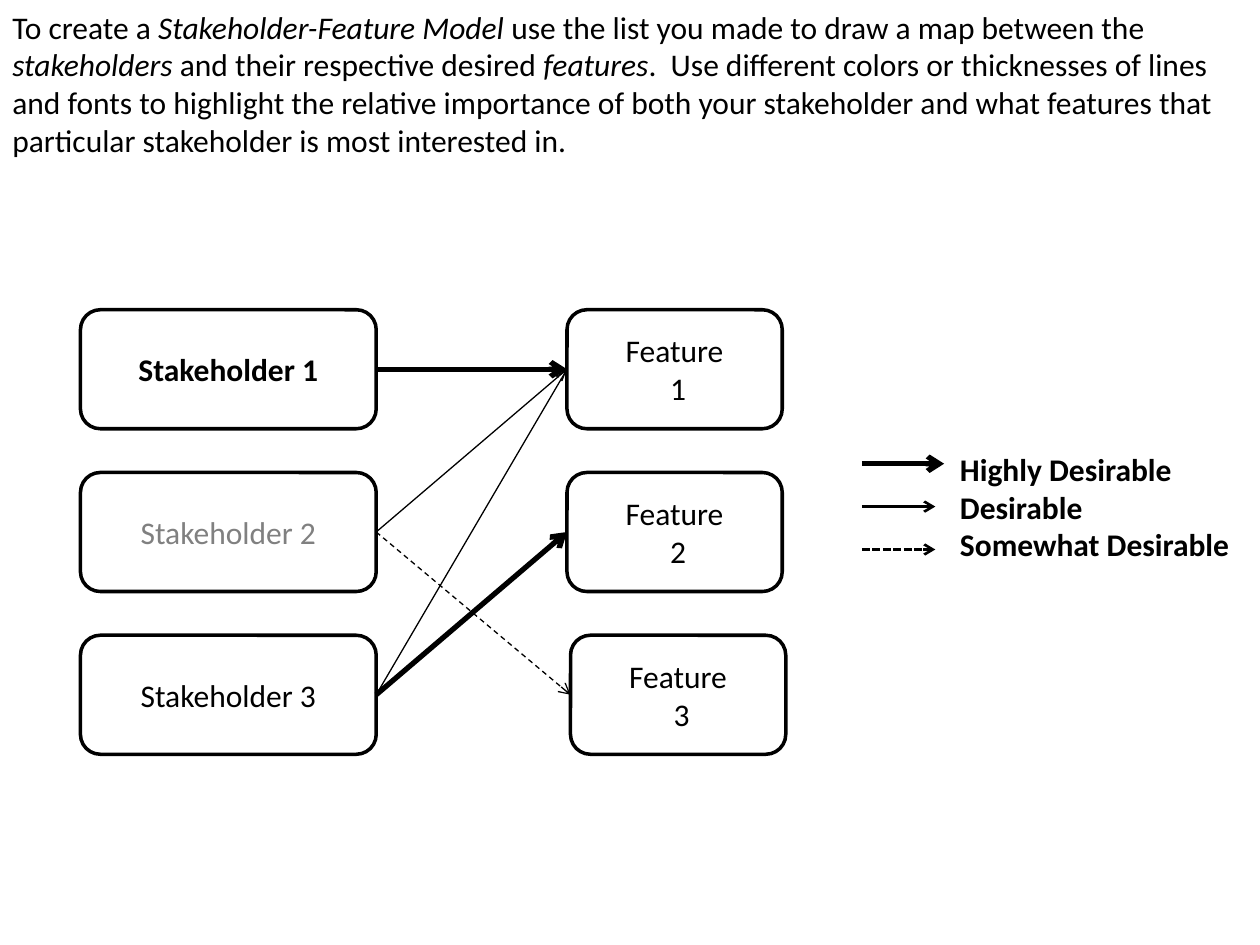
from lxml.etree import SubElement
from pptx import Presentation
from pptx.dml.color import RGBColor
from pptx.enum.dml import MSO_LINE_DASH_STYLE as Dash
from pptx.enum.shapes import MSO_CONNECTOR as Connector, MSO_SHAPE as Shape
from pptx.enum.text import MSO_ANCHOR as Anchor, MSO_AUTO_SIZE as AutoSize, PP_ALIGN as Align
from pptx.oxml.ns import qn
from pptx.util import Pt

COLORS = {"ink": "000000", "muted": "808080"}
LEFT_SITE, RIGHT_SITE = 1, 3


class MapSlide:
    font = {"name": "Calibri", "size": Pt(18)}

    def __init__(self, slide):
        self.slide = slide

    def color(self, name):
        return RGBColor.from_string(COLORS[name])

    def apply(self, target, values):
        for name, value in values.items():
            setattr(target, name, value)

    def add_paragraphs(self, frame, paragraphs, align=Align.LEFT, color="ink"):
        for index, runs in enumerate(paragraphs):
            paragraph = frame.paragraphs[0] if index == 0 else frame.add_paragraph()
            paragraph.alignment = align
            for text, style in runs:
                run = paragraph.add_run()
                run.text = text
                self.apply(run.font, self.font | style)
                run.font.color.rgb = self.color(color)

    def text(self, left, top, width, height, paragraphs, **frame_format):
        shape = self.slide.shapes.add_textbox(Pt(left), Pt(top), Pt(width), Pt(height))
        self.apply(shape.text_frame, frame_format)
        self.add_paragraphs(shape.text_frame, paragraphs)

    def box(self, left, top, width, height, lines, color="ink", **style):
        shape = self.slide.shapes.add_shape(
            Shape.ROUNDED_RECTANGLE, Pt(left), Pt(top), Pt(width), Pt(height))
        shape.shadow.inherit = False
        shape.fill.background()
        shape.line.color.rgb = self.color("ink")
        shape.line.width = Pt(2)
        self.apply(shape.text_frame, {"word_wrap": True, "vertical_anchor": Anchor.MIDDLE})
        paragraphs = [[(line, style)] for line in lines]
        self.add_paragraphs(shape.text_frame, paragraphs, Align.CENTER, color)
        return shape

    def arrow(self, start, end, width, dash=None):
        connector = self.slide.shapes.add_connector(
            Connector.STRAIGHT, *(Pt(value) for value in (*start, *end)))
        connector.line.color.rgb = self.color("ink")
        self.apply(connector.line, {"width": Pt(width), "dash_style": dash})
        properties = connector.element.spPr
        SubElement(properties.find(qn("a:ln")), qn("a:tailEnd"), type="arrow")
        SubElement(properties, qn("a:effectLst"))
        return connector

    def link(self, source, target, width, dash=None):
        connector = self.arrow((0, 0), (0, 0), width, dash)
        connector.begin_connect(source, RIGHT_SITE)
        connector.end_connect(target, LEFT_SITE)


def main():
    presentation = Presentation()
    presentation.slide_width, presentation.slide_height = Pt(720), Pt(540)
    page = MapSlide(presentation.slides.add_slide(presentation.slide_layouts[6]))

    plain, italic, bold = {}, {"italic": True}, {"bold": True}
    page.text(0, 0, 720, 95, [[
        ("To create a ", plain),
        ("Stakeholder-Feature Model", italic),
        (" use the list you made to draw a map between the ", plain),
        ("stakeholders", italic),
        (" and their respective desired ", plain),
        ("features", italic),
        (".  Use different colors or thicknesses of lines and fonts to highlight the relative "
         "importance of both your stakeholder and what features that particular stakeholder "
         "is most interested in.", plain),
    ]], word_wrap=True, vertical_anchor=Anchor.MIDDLE)

    top, pitch, height = 177, 93, 68
    stakeholder_formats = [bold, {"color": "muted"}, plain]
    feature_lefts = [324, 324, 326]
    stakeholders = [
        page.box(46, top + row * pitch, 169, height, [f"Stakeholder {row + 1}"], **style)
        for row, style in enumerate(stakeholder_formats)]
    features = [
        page.box(left, top + row * pitch, 123, height, ["Feature", f" {row + 1}"])
        for row, left in enumerate(feature_lefts)]

    for source, target, width, dash in [
        (2, 0, 0.75, None),
        (0, 0, 3, None),
        (1, 2, 0.75, Dash.DASH),
        (2, 1, 3, None),
        (1, 0, 0.75, None),
    ]:
        page.link(stakeholders[source], features[target], width, dash)

    legend = [
        ("Highly Desirable", 539.5, 3, None),
        ("Desirable", 534.5, 1.5, None),
        ("Somewhat Desirable", 534.5, 1.5, Dash.SQUARE_DOT),
    ]
    page.text(541.5, 253.5, 169, 72.7, [[(label, bold)] for label, *_ in legend],
              word_wrap=False, auto_size=AutoSize.SHAPE_TO_FIT_TEXT)
    for row, (_, right, width, dash) in enumerate(legend):
        y = 265 + row * 24.5
        page.arrow((492.5, y), (right, y), width, dash)

    presentation.save("out.pptx")


if __name__ == "__main__":
    main()
